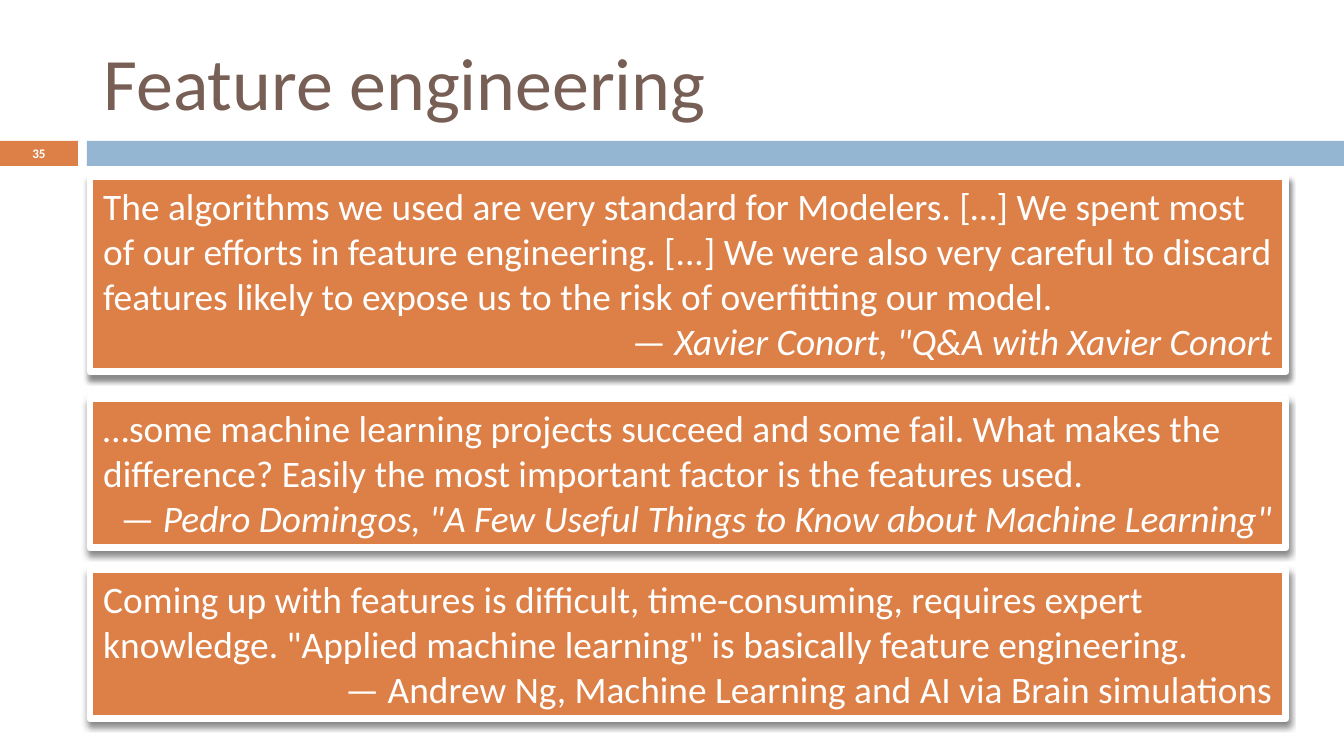
from dataclasses import dataclass

from lxml import etree
from pptx import Presentation
from pptx import util as u
from pptx.dml.color import RGBColor
from pptx.enum import shapes, text
from pptx.oxml import ns

TITLE = "Feature engineering"
PAGE_NUMBER = "35"

# Each quote: top and height in px, the words, then the credit as (words, italic) runs.
QUOTES = [
    (177, 195,
     "The algorithms we used are very standard for Modelers. […] We spent most of "
     "our efforts in feature engineering. [...] We were also very careful to discard "
     "features likely to expose us to the risk of overfitting our model.",
     [("— ", False), ('Xavier Conort, "Q&A with Xavier Conort', True)]),
    (399, 149,
     "…some machine learning projects succeed and some fail. What makes the "
     "difference? Easily the most important factor is the features used.",
     [("— ", False),
      ('Pedro Domingos, "A Few Useful Things to Know about Machine Learning"', True)]),
    (570, 149,
     "Coming up with features is difficult, time-consuming, requires expert "
     'knowledge. "Applied machine learning" is basically feature engineering.',
     [("— Andrew Ng, Machine Learning and AI via Brain simulations", False)]),
]


@dataclass(frozen=True)
class Theme:
    font: str = "Calibri"
    orange: str = "DD8047"
    blue: str = "94B6D2"
    brown: str = "775F55"
    white: str = "FFFFFF"
    shadow: str = "000000"
    title_size: float = 39.6
    quote_size: float = 20
    number_size: float = 7
    border: float = 3.75


THEME = Theme()
PX_PER_INCH = 134.4
WIDTH, HEIGHT = 1344, 756
LEFT, QUOTE_WIDTH = 90, 1196
BAND_TOP, BAND_HEIGHT = 141, 25
NUMBER_WIDTH, BAND_LEFT = 78, 87


def px(length):
    return u.Inches(length / PX_PER_INCH)


def box(*lengths):
    return [px(length) for length in lengths]


def add_run(paragraph, words, size, color, bold=False, italic=False):
    run = paragraph.add_run()
    run.text = words
    run.font.name = THEME.font
    run.font.size = u.Pt(size)
    run.font.bold = bold
    run.font.italic = italic
    run.font.color.rgb = RGBColor.from_string(color)


def add_rectangle(slide, place, fill):
    shape = slide.shapes.add_shape(shapes.MSO_SHAPE.RECTANGLE, *box(*place))
    shape.fill.solid()
    shape.fill.fore_color.rgb = RGBColor.from_string(fill)
    shape.line.fill.background()
    shape.shadow.inherit = False
    return shape


def add_drop_shadow(shape):
    effects = shape._element.spPr.find(ns.qn("a:effectLst"))
    shadow = etree.SubElement(
        effects, ns.qn("a:outerShdw"), blurRad=str(u.Pt(3)), dist=str(u.Pt(2.4)),
        dir="5400000", algn="ctr", rotWithShape="0")
    color = etree.SubElement(shadow, ns.qn("a:srgbClr"), val=THEME.shadow)
    etree.SubElement(color, ns.qn("a:alpha"), val="45000")


def add_title(slide):
    title = slide.shapes.title
    title.left, title.top, title.width, title.height = box(LEFT, 26, 1199, 109)
    frame = title.text_frame
    frame.vertical_anchor = text.MSO_ANCHOR.MIDDLE
    frame.auto_size = text.MSO_AUTO_SIZE.NONE
    paragraph = frame.paragraphs[0]
    paragraph.alignment = text.PP_ALIGN.LEFT
    add_run(paragraph, TITLE, THEME.title_size, THEME.brown)


def add_band(slide):
    number = add_rectangle(
        slide, (0, BAND_TOP, NUMBER_WIDTH, BAND_HEIGHT), THEME.orange)
    add_rectangle(
        slide, (BAND_LEFT, BAND_TOP, WIDTH - BAND_LEFT, BAND_HEIGHT), THEME.blue)
    frame = number.text_frame
    frame.margin_top = frame.margin_bottom = 0
    frame.vertical_anchor = text.MSO_ANCHOR.MIDDLE
    paragraph = frame.paragraphs[0]
    paragraph.alignment = text.PP_ALIGN.CENTER
    add_run(paragraph, PAGE_NUMBER, THEME.number_size, THEME.white, bold=True)


def add_quote(slide, top, height, words, credit):
    shape = add_rectangle(slide, (LEFT, top, QUOTE_WIDTH, height), THEME.orange)
    shape.line.color.rgb = RGBColor.from_string(THEME.white)
    shape.line.width = u.Pt(THEME.border)
    add_drop_shadow(shape)

    frame = shape.text_frame
    frame.word_wrap = True
    frame.auto_size = text.MSO_AUTO_SIZE.SHAPE_TO_FIT_TEXT
    frame.vertical_anchor = text.MSO_ANCHOR.TOP
    quote = frame.paragraphs[0]
    quote.alignment = text.PP_ALIGN.LEFT
    add_run(quote, words, THEME.quote_size, THEME.white)
    source = frame.add_paragraph()
    source.alignment = text.PP_ALIGN.RIGHT
    for part, italic in credit:
        add_run(source, part, THEME.quote_size, THEME.white, italic=italic)


def main():
    presentation = Presentation()
    presentation.slide_width, presentation.slide_height = box(WIDTH, HEIGHT)
    title_only = presentation.slide_layouts[5]
    slide = presentation.slides.add_slide(title_only)
    add_band(slide)
    add_title(slide)
    for quote in QUOTES:
        add_quote(slide, *quote)
    presentation.save("out.pptx")


if __name__ == "__main__":
    main()
